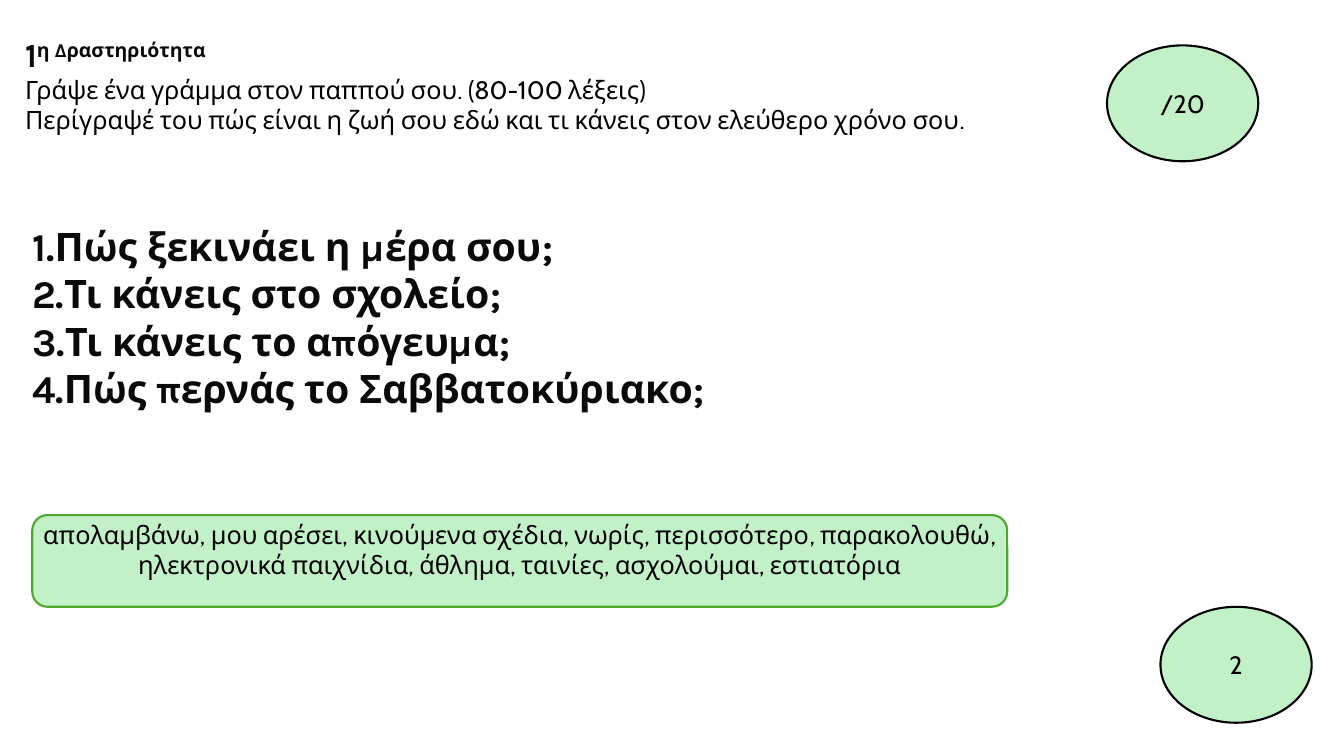
from lxml.etree import SubElement
from pptx import Presentation
from pptx.dml.color import RGBColor
from pptx.enum.shapes import MSO_SHAPE
from pptx.enum.text import MSO_ANCHOR, PP_ALIGN
from pptx.oxml.ns import qn
from pptx.util import Inches, Pt

BLACK = RGBColor(0, 0, 0)
INK = RGBColor(0x0A, 0x0A, 0x0A)
WHITE = RGBColor(0xFF, 0xFF, 0xFF)
MINT = RGBColor(0xC2, 0xF1, 0xC8)
GREEN = RGBColor(0x4E, 0xA7, 0x2E)

QUESTIONS = [
    "Πώς ξεκινάει η μέρα σου;",
    "Τι κάνεις στο σχολείο;",
    "Τι κάνεις το απόγευμα;",
    "Πώς περνάς το Σαββατοκύριακο;",
]
WORDS = ("απολαμβάνω, μου αρέσει, κινούμενα σχέδια, νωρίς, περισσότερο, "
         "παρακολουθώ, ηλεκτρονικά παιχνίδια, άθλημα, ταινίες, ασχολούμαι, εστιατόρια")


def add_run(p, text, size=18, font="Cabin", color=BLACK, bold=False, baseline=0):
    r = p.add_run()
    r.text = text
    r.font.size = Pt(size)
    r.font.name = font
    r.font.color.rgb = color
    r.font.bold = bold
    if baseline:
        r._r.get_or_add_rPr().set("baseline", str(baseline * 1000))


def add_panel(s, kind, box, fill, line=None):
    sp = s.shapes.add_shape(kind, *map(Inches, box))
    sp.shadow.inherit = False
    sp.fill.solid()
    sp.fill.fore_color.rgb = fill
    if line is None:
        sp.line.fill.background()
    else:
        sp.line.color.rgb = line
        sp.line.width = Pt(1.5)
    sp.text_frame.word_wrap = True
    return sp


def add_header(s, box):
    tf = s.shapes.add_textbox(*map(Inches, box)).text_frame
    tf.word_wrap = True
    title = dict(size=24, font="Karla", color=INK, bold=True)
    p = tf.paragraphs[0]
    add_run(p, "1", **title)
    add_run(p, "η Δραστηριότητα", baseline=30, **title)
    for text in ("Γράψε ένα γράμμα στον παππού σου. (80-100 λέξεις)",
                 "Περίγραψέ του πώς είναι η ζωή σου εδώ και τι κάνεις στον ελεύθερο χρόνο σου."):
        add_run(tf.add_paragraph(), text)


def add_badge(s, left, top, text):
    sp = add_panel(s, MSO_SHAPE.OVAL, (left, top, 1.5, 1.15), MINT, BLACK)
    tf = sp.text_frame
    tf.vertical_anchor = MSO_ANCHOR.MIDDLE
    p = tf.paragraphs[0]
    p.alignment = PP_ALIGN.CENTER
    add_run(p, text)


def add_questions(s, box):
    tf = add_panel(s, MSO_SHAPE.RECTANGLE, box, WHITE).text_frame
    tf.vertical_anchor = MSO_ANCHOR.TOP
    tf.margin_left = tf.margin_right = tf.margin_bottom = 0
    tf.margin_top = Inches(0.5)
    for number, text in enumerate(QUESTIONS, 1):
        p = tf.paragraphs[0] if number == 1 else tf.add_paragraph()
        p.alignment = PP_ALIGN.LEFT
        SubElement(p._p.get_or_add_pPr(), qn("a:buAutoNum"),
                   type="arabicPeriod", startAt=str(number))
        add_run(p, text, size=28, font="Karla", color=INK, bold=True)


def add_word_bank(s, box):
    tf = add_panel(s, MSO_SHAPE.ROUNDED_RECTANGLE, box, MINT, GREEN).text_frame
    tf.vertical_anchor = MSO_ANCHOR.TOP
    tf.margin_left = tf.margin_right = Inches(0.05)
    tf.margin_top = 0
    p = tf.paragraphs[0]
    p.alignment = PP_ALIGN.CENTER
    add_run(p, WORDS)


def main():
    prs = Presentation()
    prs.slide_width, prs.slide_height = Inches(13.33), Inches(7.5)
    s = prs.slides.add_slide(prs.slide_layouts[6])
    add_questions(s, (0.32, 1.71, 12.69, 4.07))
    add_header(s, (0.15, 0.29, 9.93, 2.32))
    add_badge(s, 10.98, 0.45, "/20")
    add_badge(s, 11.51, 6.02, "2")
    add_word_bank(s, (0.32, 5.11, 9.67, 0.91))
    prs.save("out.pptx")


if __name__ == "__main__":
    main()
